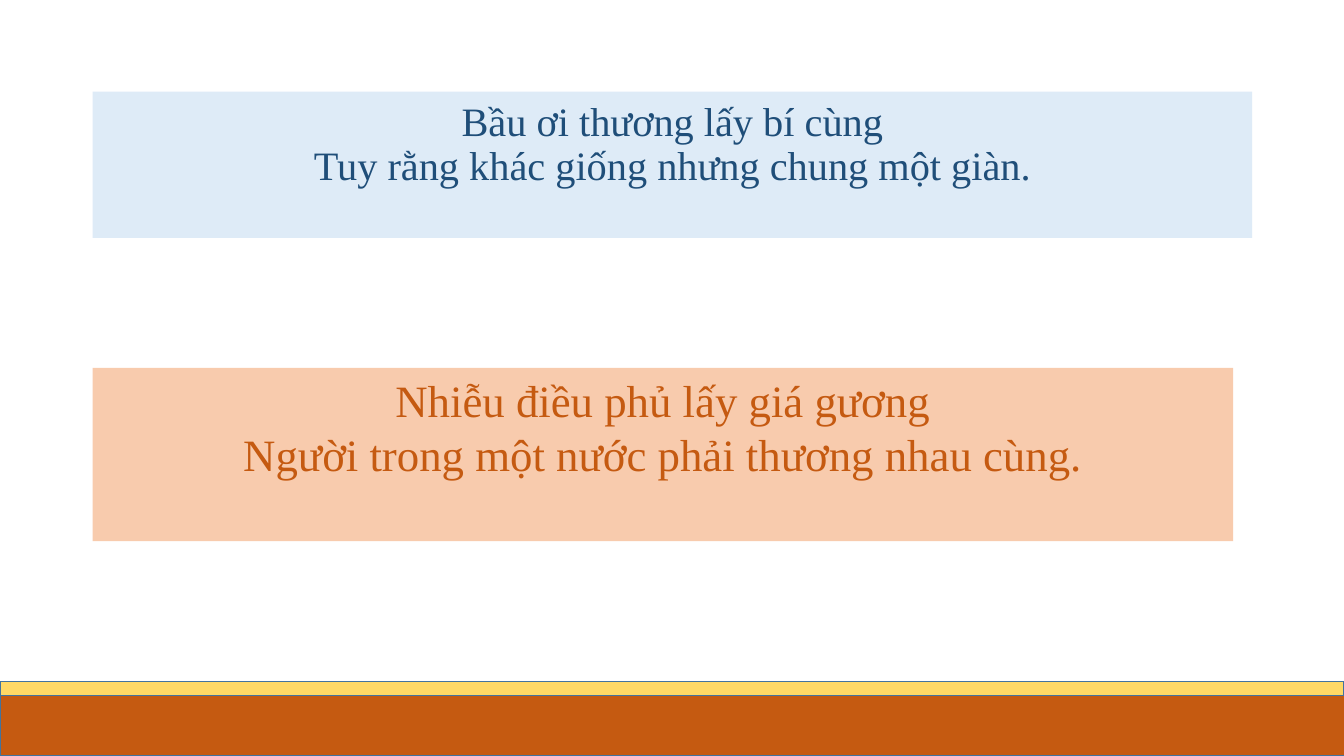
from pptx import Presentation
from pptx import util as u
from pptx.dml import color
from pptx.enum import shapes, text

COLORS = {
    "pale_blue": "DEEBF7",
    "navy": "1F4E79",
    "peach": "F8CBAD",
    "orange": "C55A11",
    "yellow": "FFD966",
    "outline": "43739E",
}


class VerseSlide:
    """Places elements on a grid of 100 columns by 100 rows."""

    font = "Times New Roman"

    def __init__(self, presentation):
        self.slide = presentation.slides.add_slide(presentation.slide_layouts[6])
        self.column = presentation.slide_width / 100
        self.row = presentation.slide_height / 100

    def rgb(self, name):
        return color.RGBColor.from_string(COLORS[name])

    def place(self, left, top, width, height):
        return (round(left * self.column), round(top * self.row),
                round(width * self.column), round(height * self.row))

    def band(self, area, fill):
        shape = self.slide.shapes.add_shape(
            shapes.MSO_SHAPE.RECTANGLE, *self.place(*area))
        shape.shadow.inherit = False
        shape.fill.solid()
        shape.fill.fore_color.rgb = self.rgb(fill)
        shape.line.color.rgb = self.rgb("outline")
        shape.line.width = u.Pt(1)

    def verse(self, area, lines, fill, ink, size, spacing=1.0, margin_top=0.05):
        box = self.slide.shapes.add_textbox(*self.place(*area))
        box.fill.solid()
        box.fill.fore_color.rgb = self.rgb(fill)
        frame = box.text_frame
        frame.word_wrap = True
        frame.margin_top = u.Inches(margin_top)
        for index, line in enumerate(lines):
            paragraph = frame.paragraphs[0] if index == 0 else frame.add_paragraph()
            paragraph.alignment = text.PP_ALIGN.CENTER
            paragraph.line_spacing = spacing
            run = paragraph.add_run()
            run.text = line
            run.font.name = self.font
            run.font.size = u.Pt(size)
            run.font.color.rgb = self.rgb(ink)


def main():
    presentation = Presentation()
    presentation.slide_width = u.Inches(13.33)
    presentation.slide_height = u.Inches(7.5)

    page = VerseSlide(presentation)
    page.verse((6.9, 12.13, 86.27, 19.33),
               ["Bầu ơi thương lấy bí cùng",
                "Tuy rằng khác giống nhưng chung một giàn."],
               "pale_blue", "navy", 28.8, spacing=0.9, margin_top=0.1)
    page.band((0, 90.13, 100, 9.87), "yellow")
    page.band((0, 92, 100.38, 8), "orange")
    page.verse((6.9, 48.67, 84.85, 22.93),
               ["Nhiễu điều phủ lấy giá gương",
                "Người trong một nước phải thương nhau cùng."],
               "peach", "orange", 32)

    presentation.save("out.pptx")


if __name__ == "__main__":
    main()
